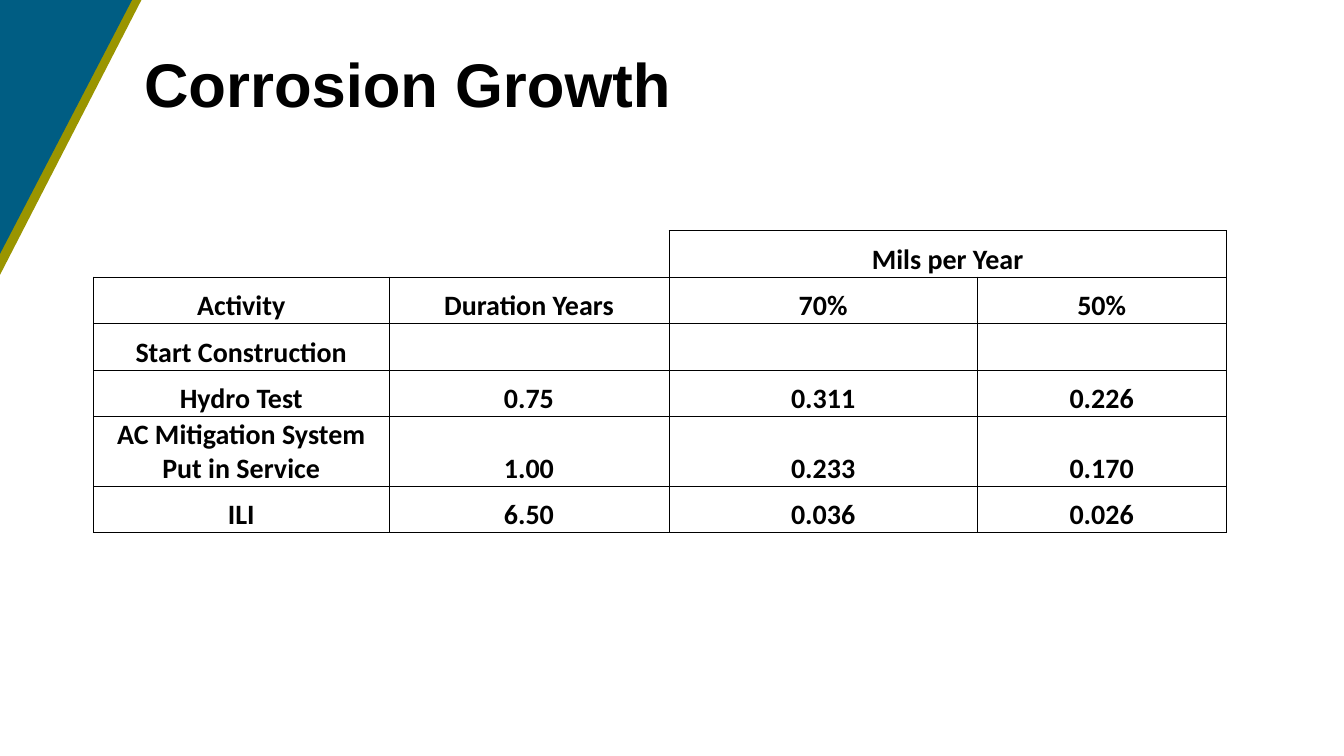
from dataclasses import dataclass

from lxml.etree import SubElement
from pptx import Presentation
from pptx.dml.color import RGBColor
from pptx.enum.shapes import MSO_SHAPE
from pptx.enum.text import MSO_ANCHOR, PP_ALIGN
from pptx.oxml.ns import qn
from pptx.slide import Slide
from pptx.table import _Cell
from pptx.util import Cm, Pt

BLACK = RGBColor(0x00, 0x00, 0x00)
GOLD = RGBColor(0x9A, 0x95, 0x00)
BLUE = RGBColor(0x00, 0x5D, 0x83)

TITLE_FONT = {"name": "Arial", "size": Pt(44), "bold": True}
CELL_FONT = {"name": "Calibri", "size": Pt(20), "bold": True}
CELL_FORMAT = {
    "margin_left": Cm(0.03),
    "margin_right": Cm(0.03),
    "margin_top": Cm(0.03),
    "margin_bottom": 0,
    "vertical_anchor": MSO_ANCHOR.BOTTOM,
}
TITLE_FORMAT = {
    "margin_left": 0,
    "margin_right": 0,
    "margin_top": 0,
    "margin_bottom": 0,
    "vertical_anchor": MSO_ANCHOR.TOP,
    "word_wrap": True,
}

COLUMN_WIDTHS = [7.44, 7.06, 7.77, 6.27]
ROW_HEIGHTS = [1.17, 1.17, 1.17, 1.17, 1.76, 1.17]
GROWTH_ROWS = [
    ["", "", "Mils per Year", ""],
    ["Activity", "Duration Years", "70%", "50%"],
    ["Start Construction", "", "", ""],
    ["Hydro Test", "0.75", "0.311", "0.226"],
    ["AC Mitigation System Put in Service", "1.00", "0.233", "0.170"],
    ["ILI", "6.50", "0.036", "0.026"],
]
# Sides drawn on the two open cells of the top row
OPEN_CELL_SIDES = {(0, 0): "B", (0, 1): "RB"}


@dataclass
class CornerBand:
    left: float
    top: float
    width: float
    height: float
    slant: float
    color: RGBColor


CORNER_BANDS = [
    CornerBand(-7.42, -0.03, 11.0, 11.33, 0.53, GOLD),
    CornerBand(-4.34, -1.37, 8.38, 8.36, 0.52, BLUE),
]


def apply_format(target: object, values: dict) -> None:
    for attribute, value in values.items():
        setattr(target, attribute, value)


def draw_band(slide: Slide, band: CornerBand) -> None:
    corner = slide.shapes.add_shape(
        MSO_SHAPE.PARALLELOGRAM,
        Cm(band.left), Cm(band.top), Cm(band.width), Cm(band.height),
    )
    corner.adjustments[0] = band.slant
    corner.shadow.inherit = False
    corner.fill.solid()
    corner.fill.fore_color.rgb = band.color
    corner.line.fill.background()


def draw_title(slide: Slide, text: str) -> None:
    title = slide.shapes.add_textbox(Cm(3.63), Cm(1.37), Cm(28.55), Cm(1.27))
    apply_format(title.text_frame, TITLE_FORMAT)
    heading = title.text_frame.paragraphs[0]
    heading.line_spacing = 0.9
    run = heading.add_run()
    run.text = text
    apply_format(run.font, TITLE_FONT)
    run.font.color.rgb = BLACK


def set_borders(cell: _Cell, sides: str) -> None:
    properties = cell._tc.get_or_add_tcPr()
    for index, side in enumerate("LRTB"):
        border = SubElement(properties, qn(f"a:ln{side}"), w=str(Pt(0.5)))
        if side in sides:
            fill = SubElement(border, qn("a:solidFill"))
            SubElement(fill, qn("a:srgbClr"), val=str(BLACK))
        else:
            SubElement(border, qn("a:noFill"))
        properties.insert(index, border)


def fill_cell(cell: _Cell, text: str, sides: str) -> None:
    apply_format(cell, CELL_FORMAT)
    cell.fill.background()
    set_borders(cell, sides)
    if text:
        entry = cell.text_frame.paragraphs[0]
        entry.alignment = PP_ALIGN.CENTER
        run = entry.add_run()
        run.text = text
        apply_format(run.font, CELL_FONT)
        run.font.color.rgb = BLACK


def draw_growth_table(slide: Slide) -> None:
    growth = slide.shapes.add_table(
        len(ROW_HEIGHTS), len(COLUMN_WIDTHS), Cm(2.36), Cm(5.81),
        Cm(sum(COLUMN_WIDTHS)), Cm(sum(ROW_HEIGHTS)),
    ).table
    growth.first_row = False
    growth.horz_banding = False
    for column, width in zip(growth.columns, COLUMN_WIDTHS):
        column.width = Cm(width)
    for row, height in zip(growth.rows, ROW_HEIGHTS):
        row.height = Cm(height)
    growth.cell(0, 2).merge(growth.cell(0, 3))
    for r, texts in enumerate(GROWTH_ROWS):
        for c, text in enumerate(texts):
            fill_cell(growth.cell(r, c), text, OPEN_CELL_SIDES.get((r, c), "LRTB"))


def main() -> None:
    presentation = Presentation()
    presentation.slide_width = Cm(33.87)
    presentation.slide_height = Cm(19.05)
    slide = presentation.slides.add_slide(presentation.slide_layouts[6])

    # Corner decoration
    for band in CORNER_BANDS:
        draw_band(slide, band)

    # Title and corrosion rates
    draw_title(slide, "Corrosion Growth")
    draw_growth_table(slide)

    presentation.save("out.pptx")


if __name__ == "__main__":
    main()
